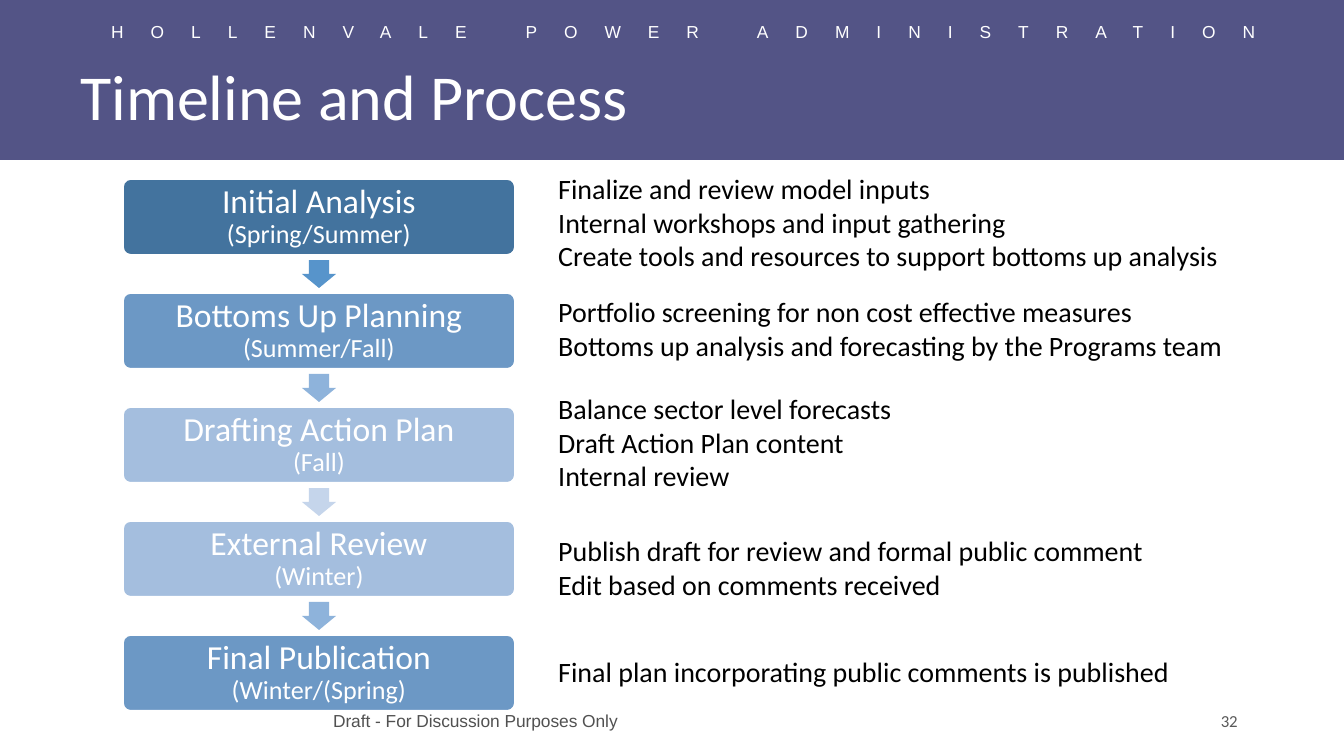
from dataclasses import dataclass

from pptx import Presentation
from pptx.dml.color import RGBColor
from pptx.enum.shapes import MSO_SHAPE
from pptx.enum.text import MSO_ANCHOR, PP_ALIGN
from pptx.util import Pt

RECTANGLE = MSO_SHAPE.RECTANGLE
ROUNDED = MSO_SHAPE.ROUNDED_RECTANGLE
ARROW = MSO_SHAPE.RIGHT_ARROW
LEFT, CENTER, RIGHT = PP_ALIGN.LEFT, PP_ALIGN.CENTER, PP_ALIGN.RIGHT
TOP, MIDDLE = MSO_ANCHOR.TOP, MSO_ANCHOR.MIDDLE

PAGE_WIDTH, PAGE_HEIGHT = 1344, 756
EMU_PER_PX = 914400 / 134.4


@dataclass(frozen=True)
class Theme:
    body_font: str = "Calibri"
    label_font: str = "Arial"
    white: str = "FFFFFF"
    black: str = "000000"
    band: str = "535486"
    footer: str = "515151"
    number: str = "595959"
    title_size: float = 34.3
    stage_size: float = 18
    season_size: float = 14
    note_size: float = 15
    label_size: float = 9.3
    number_size: float = 9


THEME = Theme()

ORGANIZATION = "HOLLENVALE POWER ADMINISTRATION"
TITLE = "Timeline and Process"
FOOTER = "Draft - For Discussion Purposes Only"
PAGE_NUMBER = "32"

# stage, season, box colour, colour of the arrow below, top of notes, notes
STAGES = [
    ("Initial Analysis", "(Spring/Summer)", "43739E", "5794CB", 165, [
        "Finalize and review model inputs",
        "Internal workshops and input gathering",
        "Create tools and resources to support bottoms up analysis"]),
    ("Bottoms Up Planning", "(Summer/Fall)", "6C98C5", "8EB3DB", 288, [
        "Portfolio screening for non cost effective measures",
        "Bottoms up analysis and forecasting by the Programs team"]),
    ("Drafting Action Plan", "(Fall)", "A4BEDE", "C5D5EB", 385, [
        "Balance sector level forecasts",
        "Draft Action Plan content",
        "Internal review"]),
    ("External Review", "(Winter)", "A4BEDE", "8EB3DB", 527, [
        "Publish draft for review and formal public comment",
        "Edit based on comments received"]),
    ("Final Publication", "(Winter/(Spring)", "6C98C5", None, 648, [
        "Final plan incorporating public comments is published"]),
]

STAGE_LEFT, STAGE_TOP, STAGE_WIDTH, STAGE_HEIGHT = 123, 179, 392, 76
STAGE_PITCH = 114
ARROW_LENGTH, ARROW_BREADTH = 28, 34
NOTE_LEFT, NOTE_WIDTH, NOTE_LINE, NOTE_PADDING = 545, 706, 34, 13


def px(value):
    return round(value * EMU_PER_PX)


def add_shape(page, kind, left, top, width, height, fill):
    shape = page.shapes.add_shape(kind, px(left), px(top), px(width), px(height))
    shape.shadow.inherit = False
    shape.fill.solid()
    shape.fill.fore_color.rgb = RGBColor.from_string(fill)
    shape.line.fill.background()
    return shape


def set_text(frame, lines, sizes, color, font=THEME.body_font,
             align=LEFT, anchor=TOP, spacing=None):
    """Write one paragraph per line, each with its own size."""
    frame.word_wrap = True
    frame.vertical_anchor = anchor
    frame.text = "\n".join(lines)
    for paragraph, size in zip(frame.paragraphs, sizes):
        paragraph.alignment = align
        paragraph.line_spacing = spacing
        for span in paragraph.runs:
            span.font.name = font
            span.font.size = Pt(size)
            span.font.color.rgb = RGBColor.from_string(color)


def add_text(page, left, top, width, height, lines, size, color, **style):
    box = page.shapes.add_textbox(px(left), px(top), px(width), px(height))
    set_text(box.text_frame, lines, [size] * len(lines), color, **style)
    return box


def add_frame(page):
    """Header band, title and footer."""
    add_shape(page, RECTANGLE, 0, -1, PAGE_WIDTH, 161, THEME.band)
    header = add_text(page, 0, 15, 1367, 35, [ORGANIZATION], THEME.label_size,
                      THEME.white, font=THEME.label_font, align=CENTER)
    span = header.text_frame.paragraphs[0].runs[0]
    span.font._element.set("spc", "1450")
    add_text(page, 949, 700, 302, 41, [PAGE_NUMBER], THEME.number_size,
             THEME.number, align=RIGHT, anchor=MIDDLE)
    add_text(page, 67, 700, 817, 41, [FOOTER], THEME.label_size, THEME.footer,
             font=THEME.label_font, align=CENTER, anchor=MIDDLE)
    add_text(page, 67, 67, 1210, 66, [TITLE], THEME.title_size, THEME.white,
             anchor=MIDDLE, spacing=0.9)


def add_stage(page, top, stage, season, fill):
    box = add_shape(page, ROUNDED, STAGE_LEFT, top, STAGE_WIDTH, STAGE_HEIGHT, fill)
    box.adjustments[0] = 0.1
    box.line.color.rgb = RGBColor.from_string(THEME.white)
    box.line.width = Pt(1)
    frame = box.text_frame
    frame.margin_left = frame.margin_right = px(10)
    frame.margin_top = frame.margin_bottom = px(10)
    set_text(frame, [stage, season], [THEME.stage_size, THEME.season_size],
             THEME.white, align=CENTER, anchor=MIDDLE, spacing=0.9)


def add_arrow(page, stage_top, fill):
    """Downward arrow centred in the gap below a stage."""
    center_x = STAGE_LEFT + STAGE_WIDTH / 2
    center_y = stage_top + (STAGE_HEIGHT + STAGE_PITCH) / 2
    arrow = add_shape(page, ARROW, center_x - ARROW_LENGTH / 2,
                      center_y - ARROW_BREADTH / 2,
                      ARROW_LENGTH, ARROW_BREADTH, fill)
    arrow.rotation = 90
    arrow.adjustments[0] = 0.6
    arrow.adjustments[1] = 0.5


def main():
    deck = Presentation()
    deck.slide_width, deck.slide_height = px(PAGE_WIDTH), px(PAGE_HEIGHT)
    page = deck.slides.add_slide(deck.slide_layouts[6])
    add_frame(page)
    for index, (stage, season, fill, arrow_fill, note_top, notes) in enumerate(STAGES):
        top = STAGE_TOP + index * STAGE_PITCH
        add_stage(page, top, stage, season, fill)
        if arrow_fill:
            add_arrow(page, top, arrow_fill)
        add_text(page, NOTE_LEFT, note_top, NOTE_WIDTH,
                 NOTE_LINE * len(notes) + NOTE_PADDING, notes,
                 THEME.note_size, THEME.black)
    deck.save("out.pptx")


if __name__ == "__main__":
    main()
